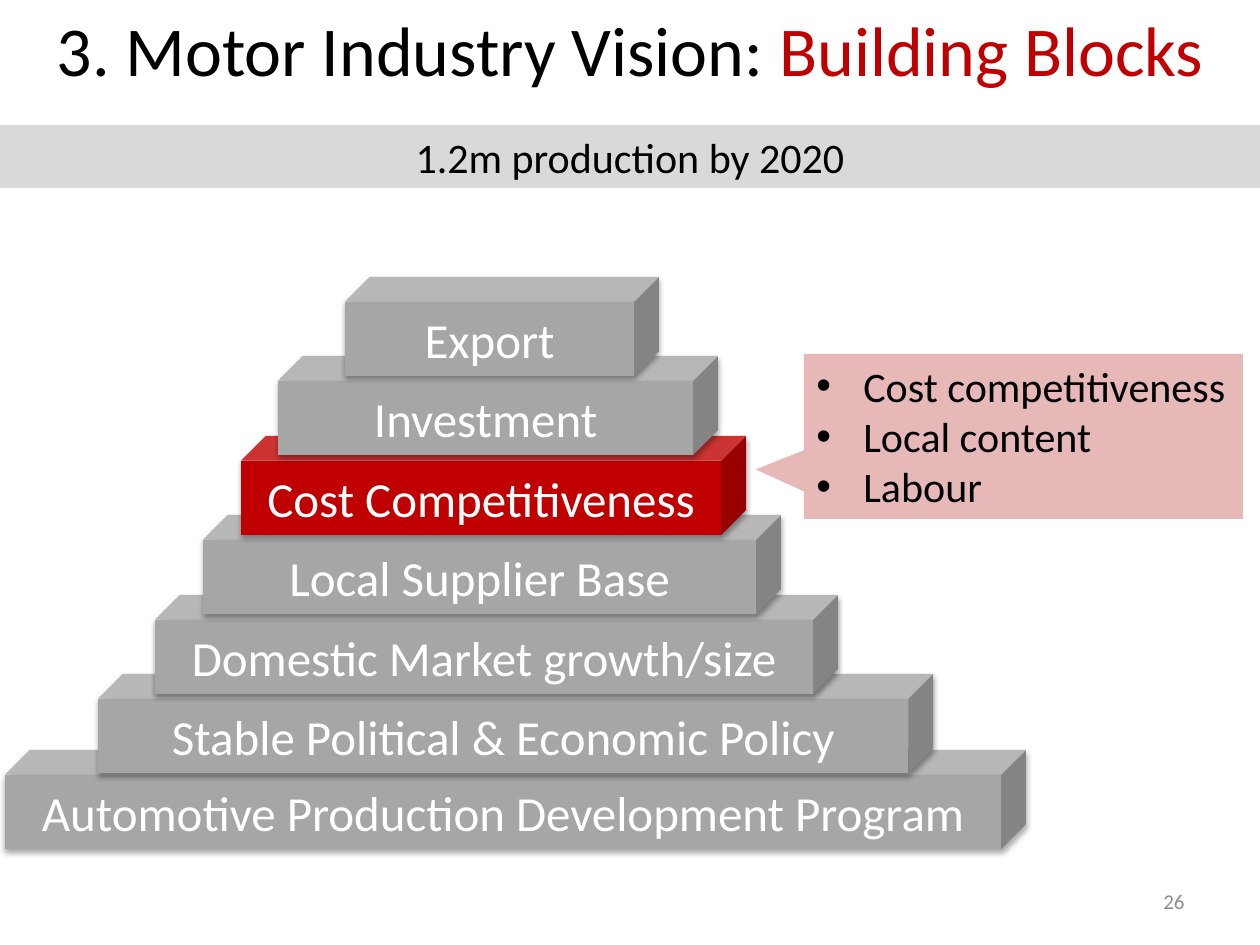
from dataclasses import dataclass

from lxml import etree
from pptx import Presentation
from pptx.dml.color import RGBColor
from pptx.enum.shapes import MSO_SHAPE
from pptx.enum.text import MSO_ANCHOR, PP_ALIGN
from pptx.oxml.ns import qn
from pptx.util import Emu, Pt

CUBE, BANNER, CALLOUT = MSO_SHAPE.CUBE, MSO_SHAPE.RECTANGLE, MSO_SHAPE.RECTANGULAR_CALLOUT
LEFT, CENTER, RIGHT = PP_ALIGN.LEFT, PP_ALIGN.CENTER, PP_ALIGN.RIGHT
TOP, MIDDLE = MSO_ANCHOR.TOP, MSO_ANCHOR.MIDDLE
EMU_PER_PX = 914400 / 126


@dataclass(frozen=True)
class Theme:
    font: str = "Calibri"
    black: str = "000000"
    white: str = "FFFFFF"
    accent: str = "C00000"
    block: str = "A6A6A6"
    banner: str = "D9D9D9"
    callout: str = "E6B9B8"
    muted: str = "8C8C8C"
    title_size: int = 40
    block_size: int = 28
    body_size: int = 24
    number_size: int = 12


THEME = Theme()

# label, left, width, from the top of the pyramid to its base
BLOCKS = [
    ("Export", 340, 314),
    ("Investment", 273, 440),
    ("Cost Competitiveness", 236, 505),
    ("Local Supplier Base", 198, 578),
    ("Domestic Market growth/size", 150, 683),
    ("Stable Political & Economic Policy", 93, 835),
    ("Automotive Production Development Program", 0, 1021),
]
HIGHLIGHTED = "Cost Competitiveness"
BLOCK_HEIGHT = 99
BLOCK_PITCH = 79.4
COST_DRIVERS = ["Cost competitiveness", "Local content", "Labour"]


def px(length):
    return Emu(round(length * EMU_PER_PX))


def add_run(paragraph, text, size, color):
    run = paragraph.add_run()
    run.text = text
    run.font.name = THEME.font
    run.font.size = Pt(size)
    run.font.color.rgb = RGBColor.from_string(color)


def set_frame(shape, anchor, align, wrap=True):
    """Format the text frame and return its first paragraph."""
    frame = shape.text_frame
    frame.word_wrap = wrap
    frame.vertical_anchor = anchor
    paragraph = frame.paragraphs[0]
    paragraph.alignment = align
    return paragraph


def add_flat_shape(slide, kind, box, fill):
    shape = slide.shapes.add_shape(kind, *map(px, box))
    shape.shadow.inherit = False
    shape.fill.solid()
    shape.fill.fore_color.rgb = RGBColor.from_string(fill)
    shape.line.fill.background()
    return shape


def add_soft_shadow(shape):
    effects = shape._element.spPr.find(qn("a:effectLst"))
    shadow = etree.SubElement(
        effects, qn("a:outerShdw"), blurRad=str(Pt(3.1)), dist=str(Pt(1.8)),
        dir="5400000", rotWithShape="0")
    color = etree.SubElement(shadow, qn("a:srgbClr"), val=THEME.black)
    etree.SubElement(color, qn("a:alpha"), val="35000")


def set_bullet(paragraph, indent):
    props = paragraph._p.get_or_add_pPr()
    props.set("marL", str(px(indent)))
    props.set("indent", str(px(-indent)))
    etree.SubElement(props, qn("a:buFont"), typeface="Arial")
    etree.SubElement(props, qn("a:buChar"), char="•")


def build_title(slide, box):
    title = slide.shapes.title
    title.left, title.top, title.width, title.height = map(px, box)
    heading = set_frame(title, TOP, CENTER)
    add_run(heading, "3. Motor Industry Vision: ", THEME.title_size, THEME.black)
    add_run(heading, "Building Blocks", THEME.title_size, THEME.accent)


def build_banner(slide, box):
    banner = add_flat_shape(slide, BANNER, box, THEME.banner)
    add_run(set_frame(banner, MIDDLE, CENTER), "1.2m production by 2020",
            THEME.body_size, THEME.black)


def build_pyramid(slide, box):
    """Stack the blocks from the base up, so that each overlaps the one below."""
    left, top, _, height = box
    for level, (label, offset, width) in reversed(list(enumerate(BLOCKS))):
        drop = min(round(level * BLOCK_PITCH), height - BLOCK_HEIGHT)
        fill = THEME.accent if label == HIGHLIGHTED else THEME.block
        block = add_flat_shape(
            slide, CUBE, (left + offset, top + drop, width, BLOCK_HEIGHT), fill)
        add_soft_shadow(block)
        add_run(set_frame(block, MIDDLE, CENTER), label, THEME.block_size, THEME.white)


def build_callout(slide, box):
    callout = add_flat_shape(slide, CALLOUT, box, THEME.callout)
    callout.adjustments[0] = -0.61
    callout.adjustments[1] = 0.2
    paragraph = set_frame(callout, TOP, LEFT, wrap=False)
    for index, driver in enumerate(COST_DRIVERS):
        if index:
            paragraph = callout.text_frame.add_paragraph()
            paragraph.alignment = LEFT
        set_bullet(paragraph, 47)
        add_run(paragraph, driver, THEME.body_size, THEME.black)


def build_page_number(slide, box):
    number = slide.shapes.add_textbox(*map(px, box))
    add_run(set_frame(number, MIDDLE, RIGHT), "26", THEME.number_size, THEME.muted)


def main():
    deck = Presentation()
    deck.slide_width, deck.slide_height = px(1260), px(945)
    slide = deck.slides.add_slide(deck.slide_layouts[5])
    build_title(slide, (0, 0, 1260, 118))
    build_pyramid(slide, (5, 277, 1021, 572))
    build_banner(slide, (0, 125, 1260, 63))
    build_page_number(slide, (903, 876, 294, 50))
    build_callout(slide, (804, 354, 439, 165))
    deck.save("out.pptx")


if __name__ == "__main__":
    main()
